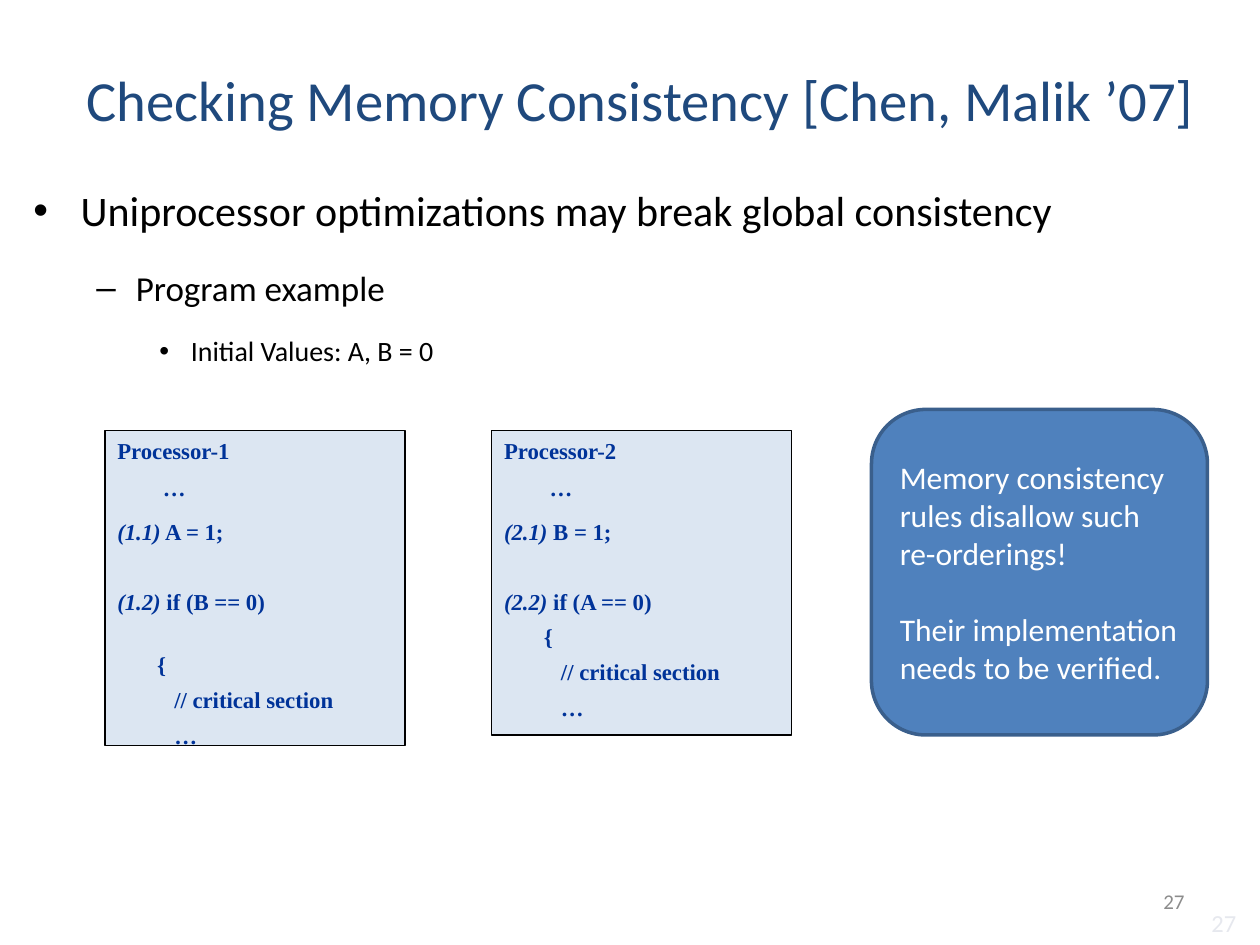
from dataclasses import dataclass

from lxml.etree import SubElement
from pptx import Presentation
from pptx.dml.color import RGBColor
from pptx.enum.shapes import MSO_SHAPE
from pptx.enum.text import MSO_ANCHOR, MSO_AUTO_SIZE, PP_ALIGN
from pptx.oxml.ns import qn
from pptx.util import Pt


@dataclass(frozen=True)
class Theme:
    sans: str = "Calibri"
    serif: str = "Times New Roman"
    title: str = "1F497D"
    body: str = "000000"
    code: str = "003399"
    panel: str = "DCE6F2"
    callout: str = "4F81BD"
    callout_line: str = "3A5F8C"
    white: str = "FFFFFF"
    number: str = "8C8C8C"
    faint: str = "E6E8EE"
    title_size: float = 32.4
    code_size: float = 13
    callout_size: float = 18
    number_size: float = 12
    faint_size: float = 14


@dataclass(frozen=True)
class Box:
    left: float
    top: float
    width: float
    height: float

    def lengths(self) -> list:
        return [Pt(v) for v in (self.left, self.top, self.width, self.height)]


@dataclass(frozen=True)
class Bullet:
    text: str
    mark: str
    size: float
    margin: float
    hanging: float
    before: float
    spacing: float


@dataclass(frozen=True)
class Processor:
    number: int
    own: str
    other: str
    left: float
    height: float
    brace_gap: float


THEME = Theme()
LINE_GAP = 4.5
BULLETS = [
    Bullet("Uniprocessor optimizations may break global consistency", "•", 24, 27, 27, 0, 1),
    Bullet("Program example", "–", 20, 58.5, 22.5, 6, 1.5),
    Bullet("Initial Values: A, B = 0", "•", 16, 90, 18, 4.8, 1.5),
]
PROCESSORS = [
    Processor(1, "A", "B", 60, 180, 20.5),
    Processor(2, "B", "A", 281, 174, LINE_GAP),
]


def rgb(color: str) -> RGBColor:
    return RGBColor.from_string(color)


def add_run(p, text: str, *, size: float, color: str, font: str = THEME.sans,
            bold: bool = False, italic: bool = False) -> None:
    r = p.add_run()
    r.text = text
    f = r.font
    f.size, f.name, f.bold, f.italic = Pt(size), font, bold, italic
    f.color.rgb = rgb(color)


def next_paragraph(tf):
    """Return the untouched first paragraph, or append a new one."""
    first = tf.paragraphs[0]
    return tf.add_paragraph() if first.runs else first


def set_indent(p, margin: float, hanging: float = 0) -> None:
    pPr = p._p.get_or_add_pPr()
    pPr.set("marL", str(Pt(margin)))
    pPr.set("indent", str(-Pt(hanging)))


def add_text_box(s, box: Box, anchor=MSO_ANCHOR.TOP):
    tf = s.shapes.add_textbox(*box.lengths()).text_frame
    tf.word_wrap = True
    tf.vertical_anchor = anchor
    return tf


def add_panel(s, kind, box: Box, *, fill: str, line: str, weight: float, anchor):
    sp = s.shapes.add_shape(kind, *box.lengths())
    sp.shadow.inherit = False
    sp.fill.solid()
    sp.fill.fore_color.rgb = rgb(fill)
    sp.line.color.rgb = rgb(line)
    sp.line.width = Pt(weight)
    tf = sp.text_frame
    tf.word_wrap = True
    tf.vertical_anchor = anchor
    return tf


def add_title(s, text: str) -> None:
    sp = s.shapes.title
    sp.left, sp.top, sp.width, sp.height = Box(42, 30, 648, 53.5).lengths()
    tf = sp.text_frame
    tf.auto_size = MSO_AUTO_SIZE.NONE
    tf.vertical_anchor = MSO_ANCHOR.MIDDLE
    p = tf.paragraphs[0]
    p.alignment = PP_ALIGN.CENTER
    add_run(p, text, size=THEME.title_size, color=THEME.title)


def add_bullets(s) -> None:
    tf = add_text_box(s, Box(12, 102, 708, 450))
    for level, b in enumerate(BULLETS):
        p = next_paragraph(tf)
        p.level = level
        p.space_before = Pt(b.before)
        p.line_spacing = b.spacing
        set_indent(p, b.margin, b.hanging)
        SubElement(p._p.get_or_add_pPr(), qn("a:buFont")).set("typeface", "Arial")
        SubElement(p._p.get_or_add_pPr(), qn("a:buChar")).set("char", b.mark)
        add_run(p, b.text, size=b.size, color=THEME.body)


def add_processor(s, proc: Processor) -> None:
    tf = add_panel(s, MSO_SHAPE.RECTANGLE, Box(proc.left, 246, 171.5, proc.height),
                   fill=THEME.panel, line=THEME.body, weight=0.75, anchor=MSO_ANCHOR.TOP)
    n = proc.number
    # step label, code, indent, space before
    lines = [
        ("", f"Processor-{n}", 0, 0),
        ("", "…", 26, 5.5),
        (f"({n}.1)", f" {proc.own} = 1;", 0, 9.5),
        (f"({n}.2)", f" if ({proc.other} == 0)", 0, 24.5),
        ("", "{", 22.75, proc.brace_gap),
        ("", "// critical section", 32.5, LINE_GAP),
        ("", "…", 32.5, LINE_GAP),
    ]
    style = dict(size=THEME.code_size, color=THEME.code, font=THEME.serif, bold=True)
    for label, code, indent, before in lines:
        p = next_paragraph(tf)
        p.alignment = PP_ALIGN.LEFT
        p.space_before = Pt(before)
        set_indent(p, indent)
        if label:
            add_run(p, label, italic=True, **style)
        add_run(p, code, **style)


def add_callout(s) -> None:
    tf = add_panel(s, MSO_SHAPE.ROUNDED_RECTANGLE, Box(498, 234, 192, 186),
                   fill=THEME.callout, line=THEME.callout_line, weight=2,
                   anchor=MSO_ANCHOR.MIDDLE)
    for text, before in (("Memory consistency rules disallow such re-orderings!", 0),
                         ("Their implementation needs to be verified.", 22)):
        p = next_paragraph(tf)
        p.alignment = PP_ALIGN.LEFT
        p.space_before = Pt(before)
        add_run(p, text, size=THEME.callout_size, color=THEME.white)


def add_number(s, box: Box, *, size: float, color: str) -> None:
    p = add_text_box(s, box, MSO_ANCHOR.MIDDLE).paragraphs[0]
    p.alignment = PP_ALIGN.RIGHT
    add_run(p, "27", size=size, color=color)


def main() -> None:
    prs = Presentation()
    prs.slide_width, prs.slide_height = Pt(720), Pt(540)
    s = prs.slides.add_slide(prs.slide_layouts[5])
    add_title(s, "Checking Memory Consistency [Chen, Malik ’07]")
    add_bullets(s)
    for proc in PROCESSORS:
        add_processor(s, proc)
    add_number(s, Box(640, 515, 73.5, 25), size=THEME.faint_size, color=THEME.faint)
    add_number(s, Box(516, 500.5, 168, 29), size=THEME.number_size, color=THEME.number)
    add_callout(s)
    prs.save("out.pptx")


if __name__ == "__main__":
    main()
